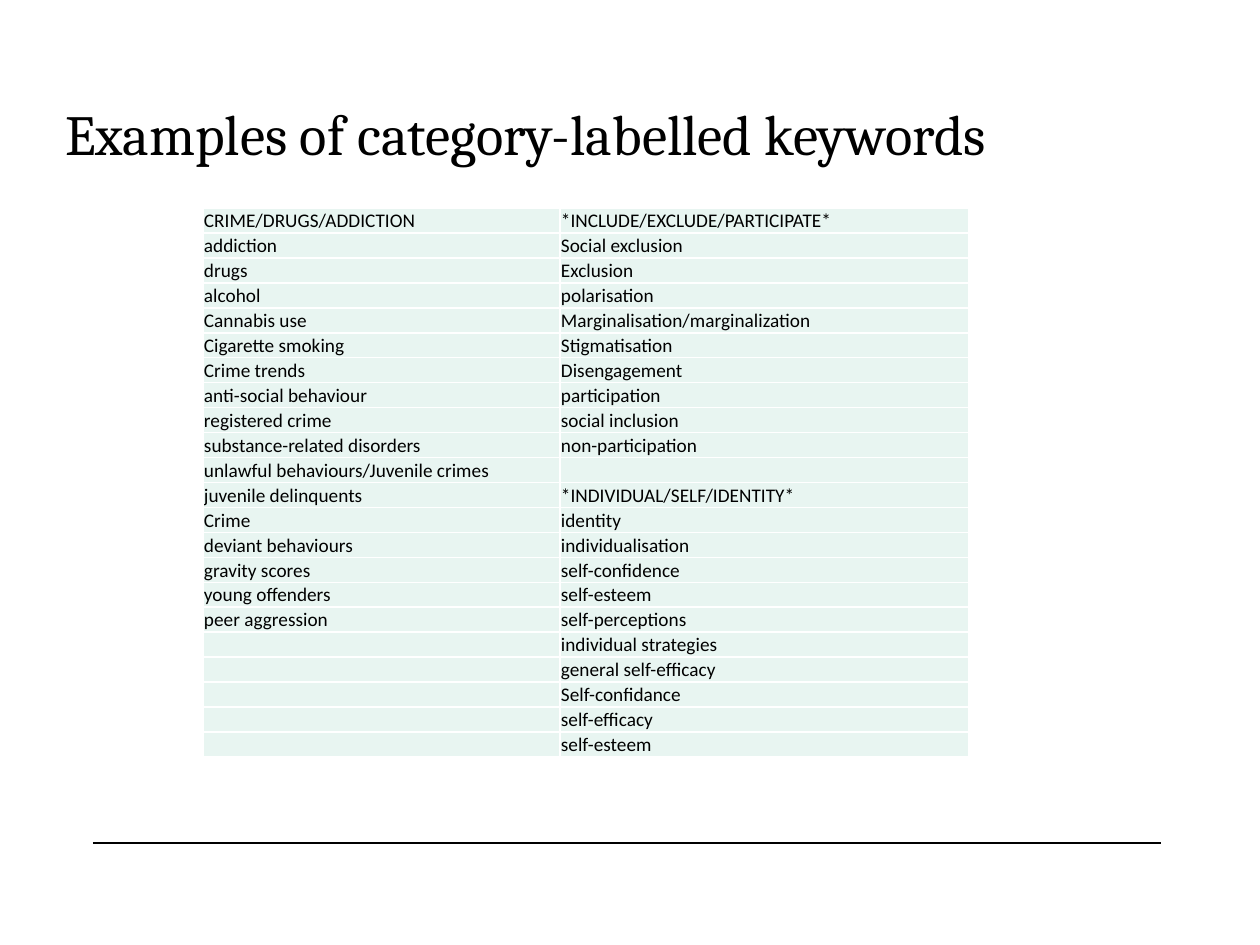
from itertools import zip_longest

from lxml import etree
from pptx import Presentation
from pptx import util as u
from pptx.dml.color import RGBColor
from pptx.enum import shapes, text
from pptx.oxml.ns import qn

PX = 914400 // 126
COLORS = {"ink": "000000", "cell": "E8F5F1", "border": "FFFFFF"}
TITLE_FONT = {"name": "Cambria", "size": u.Pt(32.4)}
CELL_FONT = {"name": "Calibri", "size": u.Pt(11)}
CELL_FORMAT = {
    "vertical_anchor": text.MSO_ANCHOR.BOTTOM,
    "margin_left": PX, "margin_top": PX, "margin_right": PX, "margin_bottom": 0,
}

CRIME = [
    "CRIME/DRUGS/ADDICTION", "addiction", "drugs", "alcohol", "Cannabis use",
    "Cigarette smoking", "Crime trends", "anti-social behaviour",
    "registered crime", "substance-related disorders",
    "unlawful behaviours/Juvenile crimes", "juvenile delinquents", "Crime",
    "deviant behaviours", "gravity scores", "young offenders",
    "peer aggression",
]
INCLUSION = [
    "*INCLUDE/EXCLUDE/PARTICIPATE*", "Social exclusion", "Exclusion",
    "polarisation", "Marginalisation/marginalization", "Stigmatisation",
    "Disengagement", "participation", "social inclusion", "non-participation",
]
IDENTITY = [
    "*INDIVIDUAL/SELF/IDENTITY*", "identity", "individualisation",
    "self-confidence", "self-esteem", "self-perceptions",
    "individual strategies", "general self-efficacy", "Self-confidance",
    "self-efficacy", "self-esteem",
]


def rgb(name):
    return RGBColor.from_string(COLORS[name])


def set_all(obj, values):
    for name, value in values.items():
        setattr(obj, name, value)


def write(p, content, font):
    r = p.add_run()
    r.text = content
    set_all(r.font, font)
    r.font.color.rgb = rgb("ink")


def add_title(s, box, content):
    sp = s.shapes.add_textbox(*(v * PX for v in box))
    tf = sp.text_frame
    set_all(tf, {"word_wrap": True, "vertical_anchor": text.MSO_ANCHOR.TOP})
    write(tf.paragraphs[0], content, TITLE_FONT)


def add_borders(cell):
    """Draw a 1 pt line on all four sides, ahead of the cell's fill."""
    tc_pr = cell._tc.get_or_add_tcPr()
    for i, side in enumerate(("lnL", "lnR", "lnT", "lnB")):
        ln = etree.Element(qn(f"a:{side}"), w=str(u.Pt(1)))
        fill = etree.SubElement(ln, qn("a:solidFill"))
        etree.SubElement(fill, qn("a:srgbClr"), val=COLORS["border"])
        tc_pr.insert(i, ln)


def fill_cell(cell, content):
    set_all(cell, CELL_FORMAT)
    cell.fill.solid()
    cell.fill.fore_color.rgb = rgb("cell")
    add_borders(cell)
    p = cell.text_frame.paragraphs[0]
    if content:
        write(p, content, CELL_FONT)
    else:  # keeps an empty row as low as the others
        end = etree.SubElement(p._p, qn("a:endParaRPr"))
        end.set("sz", str(CELL_FONT["size"].centipoints))


def add_keyword_table(s, left, top, widths, row_height, columns):
    rows = list(zip_longest(*columns, fillvalue=""))
    frame = s.shapes.add_table(
        len(rows), len(widths), left * PX, top * PX,
        sum(widths) * PX, len(rows) * row_height * PX)
    table = frame.table
    set_all(table, {"first_row": False, "horz_banding": False})
    for column, width in zip(table.columns, widths):
        column.width = width * PX
    for row, contents in zip(table.rows, rows):
        row.height = row_height * PX
        for cell, content in zip(row.cells, contents):
            fill_cell(cell, content)


def add_footer_rule(s, left, right, y):
    line = s.shapes.add_connector(
        shapes.MSO_CONNECTOR.STRAIGHT, left * PX, y * PX, right * PX, y * PX)
    line.line.color.rgb = rgb("ink")
    line.line.width = u.Pt(0.75)
    etree.SubElement(line._element.spPr, qn("a:effectLst"))


def main():
    prs = Presentation()
    set_all(prs, {"slide_width": u.Inches(10), "slide_height": u.Inches(7.5)})
    s = prs.slides.add_slide(prs.slide_layouts[6])
    add_footer_rule(s, 93, 1161, 843)
    add_title(s, (53, 93, 1066, 115), "Examples of category-labelled keywords")
    add_keyword_table(s, 203, 208, (357, 409), 25,
                      (CRIME, INCLUSION + [""] + IDENTITY))
    prs.save("out.pptx")


if __name__ == "__main__":
    main()
